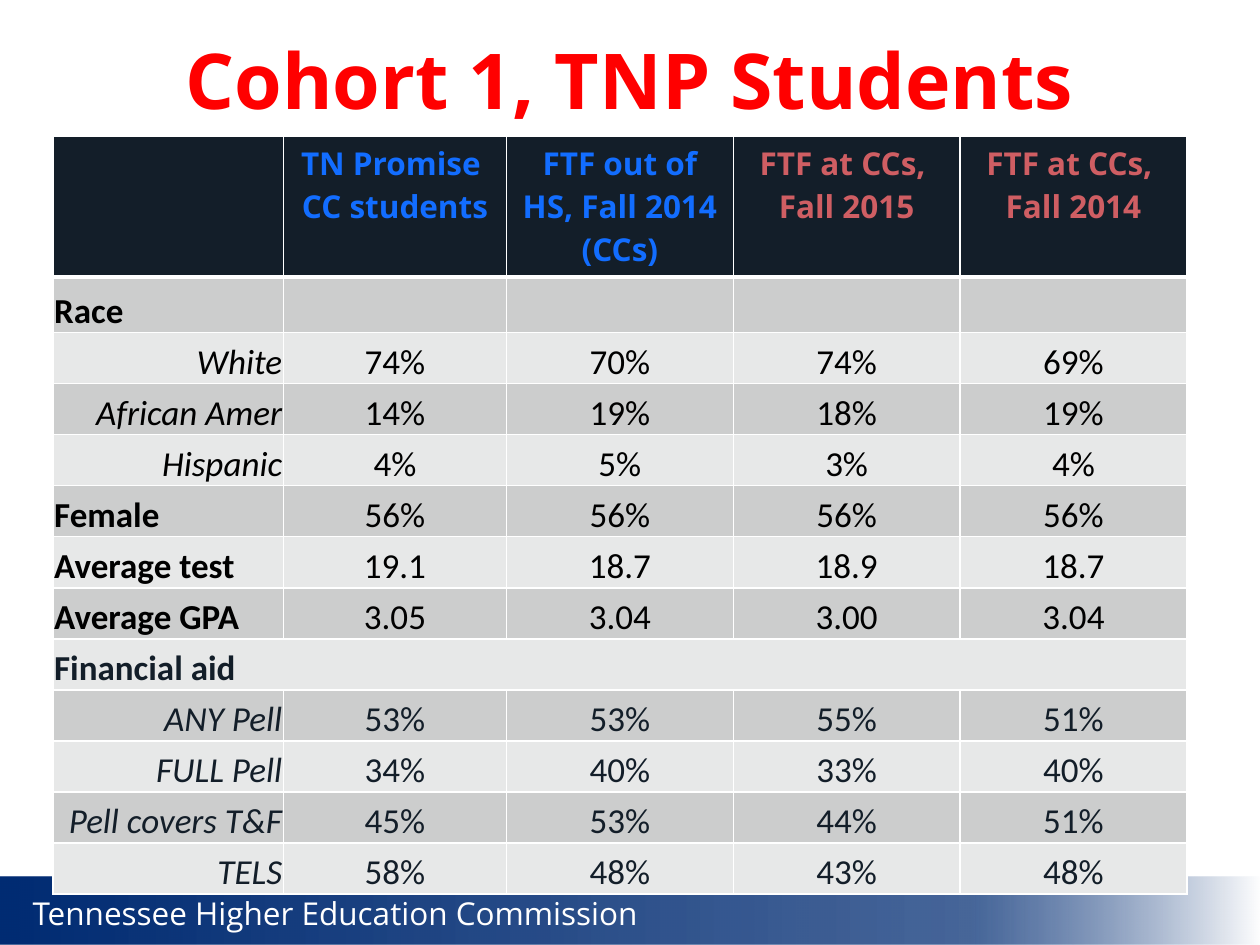
from lxml import etree
from pptx import Presentation
from pptx import util as u
from pptx.dml.color import RGBColor
from pptx.enum import shapes, text
from pptx.oxml import parse_xml
from pptx.oxml.ns import nsdecls, qn

TITLE = "Cohort 1, TNP Students"
FOOTER = "Tennessee Higher Education Commission"
HEADERS = [
    ("", "promise"),
    ("TN Promise \nCC students", "promise"),
    ("FTF out of HS, Fall 2014 (CCs)", "promise"),
    ("FTF at CCs, \nFall 2015", "all_ftf"),
    ("FTF at CCs, \nFall 2014", "all_ftf"),
]
# Level 0 labels are bold and left-aligned, level 1 italic and right-aligned.
ROWS = [
    (0, "Race", []),
    (1, "White", ["74%", "70%", "74%", "69%"]),
    (1, "African Amer", ["14%", "19%", "18%", "19%"]),
    (1, "Hispanic", ["4%", "5%", "3%", "4%"]),
    (0, "Female", ["56%", "56%", "56%", "56%"]),
    (0, "Average test", ["19.1", "18.7", "18.9", "18.7"]),
    (0, "Average GPA", ["3.05", "3.04", "3.00", "3.04"]),
    (0, "Financial aid", []),
    (1, "ANY Pell", ["53%", "53%", "55%", "51%"]),
    (1, "FULL Pell", ["34%", "40%", "33%", "40%"]),
    (1, "Pell covers T&F", ["45%", "53%", "44%", "51%"]),
    (1, "TELS", ["58%", "48%", "43%", "48%"]),
]
AID_ROW = 7

THEME = {
    "title": {"size": 44, "name": "Open Sans", "color": "FF0000", "bold": True},
    "footer": {"size": 18, "name": "Open Sans", "color": "FFFFFF"},
    "header": {"size": 18, "name": "Open Sans", "bold": True},
    "body": {"size": 20, "name": "Calibri", "bold": False},
    "promise": "126DFF", "all_ftf": "CF5E63",
    "black": "000000", "navy": "131E29", "white": "FFFFFF",
    "bands": ("CCCDCD", "E7E8E8"),
    "bar": [(0, "002C73", 100), (77, "002C73", 72), (100, "FFFFFF", 100)],
}
LEVELS = [(text.PP_ALIGN.LEFT, {"bold": True}), (text.PP_ALIGN.RIGHT, {"italic": True})]

WIDTH, HEIGHT = 10, 7.5
TABLE_LEFT, TABLE_TOP, TABLE_BOTTOM = 0.42, 1.08, 7.1
HEADER_HEIGHT, RACE_HEIGHT = 1.12, 0.44
COLUMNS = [1.83, 1.77, 1.8, 1.8, 1.8]
CENTER = text.PP_ALIGN.CENTER


def write(frame, content, align, style):
    for number, line in enumerate(content.split("\n")):
        para = frame.paragraphs[0] if number == 0 else frame.add_paragraph()
        para.alignment = align
        span = para.add_run()
        span.text = line
        for key, value in style.items():
            if key == "color":
                span.font.color.rgb = RGBColor.from_string(value)
            else:
                setattr(span.font, key, u.Pt(value) if key == "size" else value)


def add_text(page, place, content, align, style, **settings):
    box = page.shapes.add_textbox(*map(u.Inches, place))
    for key, value in settings.items():
        setattr(box.text_frame, key, value)
    write(box.text_frame, content, align, style)


def add_bar(page):
    """Footer band fading to white at the right."""
    bar = page.shapes.add_shape(shapes.MSO_SHAPE.RECTANGLE, 0, u.Inches(6.96),
                                u.Inches(WIDTH), u.Inches(HEIGHT - 6.96))
    bar.shadow.inherit = False
    bar.line.fill.background()
    stops = "".join(
        f'<a:gs pos="{at * 1000}"><a:srgbClr val="{color}">'
        f'<a:alpha val="{alpha * 1000}"/></a:srgbClr></a:gs>'
        for at, color, alpha in THEME["bar"])
    gradient = parse_xml(f'<a:gradFill {nsdecls("a")} rotWithShape="1"><a:gsLst>{stops}'
                         '</a:gsLst><a:lin ang="0" scaled="0"/></a:gradFill>')
    bar.element.spPr.find(qn("a:prstGeom")).addnext(gradient)


def format_cell(cell, fill, bottom=1):
    """Fill the cell and rule all four sides in white."""
    cell.fill.solid()
    cell.fill.fore_color.rgb = RGBColor.from_string(fill)
    props = cell._tc.get_or_add_tcPr()
    for index, side in enumerate(("lnL", "lnR", "lnT", "lnB")):
        points = bottom if side == "lnB" else 1
        line = etree.Element(qn(f"a:{side}"), w=str(u.Pt(points)))
        solid = etree.SubElement(line, qn("a:solidFill"))
        etree.SubElement(solid, qn("a:srgbClr"), val=THEME["white"])
        props.insert(index, line)


def add_table(page):
    count = len(ROWS) + 1
    row_height = (TABLE_BOTTOM - TABLE_TOP - HEADER_HEIGHT - RACE_HEIGHT) / (count - 2)
    heights = [HEADER_HEIGHT, RACE_HEIGHT] + [row_height] * (count - 2)
    place = (TABLE_LEFT, TABLE_TOP, sum(COLUMNS), sum(heights))
    table = page.shapes.add_table(count, len(COLUMNS), *map(u.Inches, place)).table
    table.horz_banding = False
    for column, width in zip(table.columns, COLUMNS):
        column.width = u.Inches(width)
    for row, height in zip(table.rows, heights):
        row.height = u.Inches(height)

    for column, (label, color) in enumerate(HEADERS):
        cell = table.cell(0, column)
        format_cell(cell, THEME["navy"], bottom=3)
        if label:
            write(cell.text_frame, label, CENTER, THEME["header"] | {"color": THEME[color]})

    insets = {"margin_left": 0.01, "margin_right": 0.01, "margin_top": 0.01, "margin_bottom": 0}
    for index, (level, label, values) in enumerate(ROWS):
        style = THEME["body"] | {"color": THEME["navy" if index >= AID_ROW else "black"]}
        align, emphasis = LEVELS[level]
        entries = [(label, align, style | emphasis)]
        entries += [(value, CENTER, style) for value in values]
        for column in range(len(COLUMNS)):
            cell = table.cell(index + 1, column)
            format_cell(cell, THEME["bands"][index % 2])
            if column < len(entries):
                cell.vertical_anchor = text.MSO_ANCHOR.BOTTOM
                for key, value in insets.items():
                    setattr(cell, key, u.Inches(value))
                write(cell.text_frame, *entries[column])
    table.cell(AID_ROW + 1, 0).merge(table.cell(AID_ROW + 1, len(COLUMNS) - 1))


def main():
    deck = Presentation()
    deck.slide_width, deck.slide_height = u.Inches(WIDTH), u.Inches(HEIGHT)
    page = deck.slides.add_slide(deck.slide_layouts[6])
    add_bar(page)
    add_text(page, (0.16, 7.05, 5.05, 0.4), FOOTER, text.PP_ALIGN.LEFT,
             THEME["footer"], word_wrap=False)
    add_text(page, (0.5, 0, 9, 1.25), TITLE, CENTER, THEME["title"],
             word_wrap=True, vertical_anchor=text.MSO_ANCHOR.MIDDLE)
    add_table(page)
    deck.save("out.pptx")


if __name__ == "__main__":
    main()
